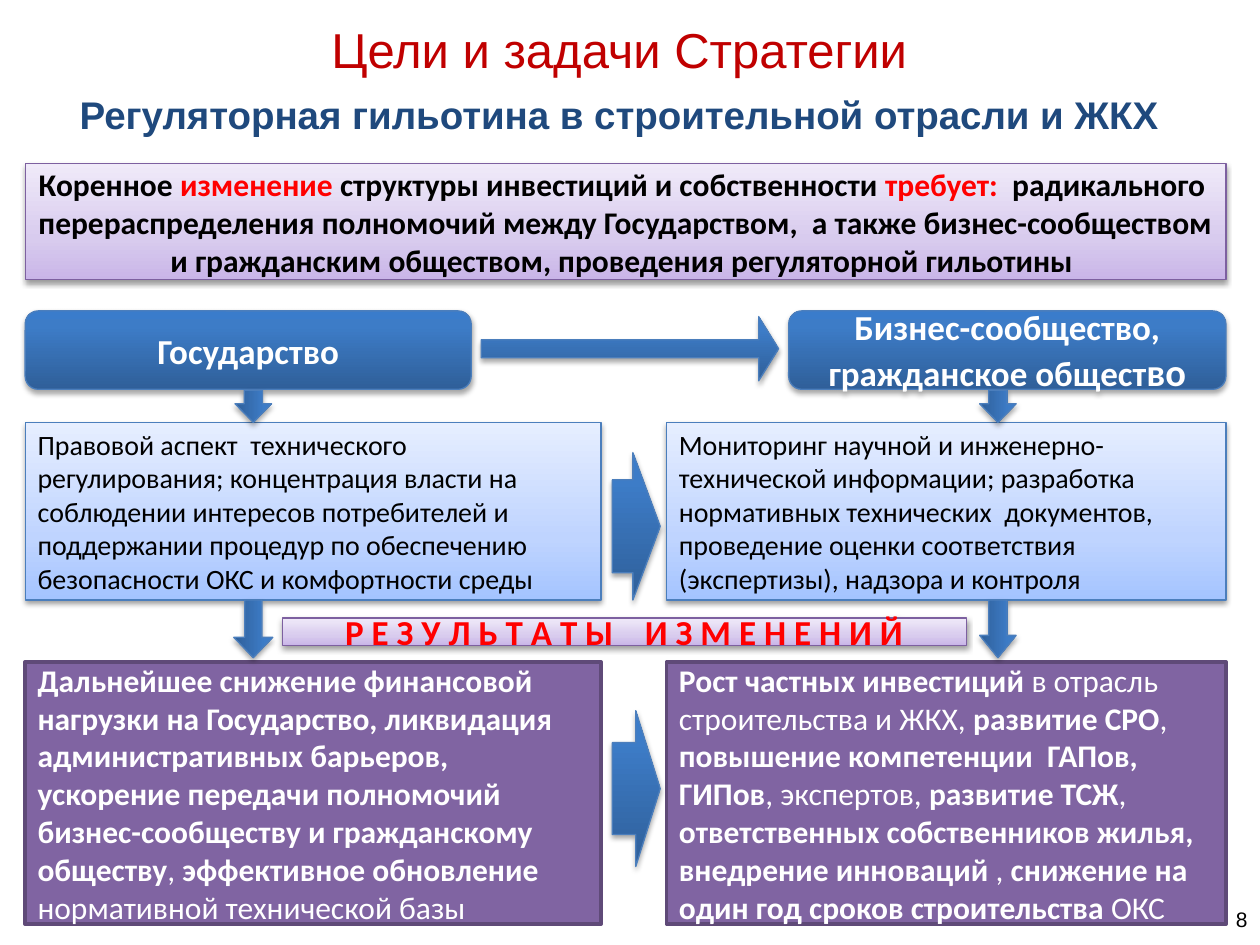
import collections

import lxml.etree
import pptx
import pptx.dml.color
import pptx.enum.shapes
import pptx.enum.text
import pptx.oxml.ns
import pptx.util

Box = collections.namedtuple("Box", "left top width height")
Style = collections.namedtuple("Style", "stops line shadow_alpha shadow_distance")

SHAPE = pptx.enum.shapes.MSO_SHAPE
ALIGN = pptx.enum.text.PP_ALIGN
WIDTH, HEIGHT = pptx.util.Inches(10), pptx.util.Inches(7.5)

BLUE = Style(((0, "2F5F99"), (80, "3D7CC7"), (100, "3A7CCB")), "4B7EBC", 35, 1.8)
PALE_BLUE = Style(((0, "A4C4FF"), (35, "BFD4FF"), (100, "E6EEFF")), "4B7EBC", 38, 1.6)
LILAC = Style(((0, "C9B5E8"), (35, "D8CBEE"), (100, "F0EAF9")), "7D60A0", 38, 1.6)
WHITE, BLACK, RED = "FFFFFF", "000000", "FF0000"


def color(value):
    return pptx.dml.color.RGBColor.from_string(value)


def place(box):
    return (int(WIDTH * box.left / 100), int(HEIGHT * box.top / 100),
            int(WIDTH * box.width / 100), int(HEIGHT * box.height / 100))


def add_node(parent, tag, **attributes):
    values = {key: str(value) for key, value in attributes.items()}
    return lxml.etree.SubElement(parent, pptx.oxml.ns.qn(tag), values)


def write(holder, text, size, ink, font="Calibri", bold=False,
          align=ALIGN.CENTER, accent=None):
    frame = holder.text_frame
    frame.word_wrap = True
    frame.auto_size = pptx.enum.text.MSO_AUTO_SIZE.NONE
    frame.vertical_anchor = pptx.enum.text.MSO_ANCHOR.MIDDLE
    paragraph = frame.paragraphs[0]
    paragraph.alignment = align
    base = {"size": size, "ink": ink, "bold": bold}
    for index, part in enumerate(text.split("|")):
        look = {**base, **(accent or {})} if index % 2 else base
        run = paragraph.add_run()
        run.text = part
        run.font.name = font
        run.font.size = pptx.util.Pt(look["size"])
        run.font.bold = look["bold"]
        run.font.color.rgb = color(look["ink"])


def add_panel(slide, kind, box, style):
    panel = slide.shapes.add_shape(kind, *place(box))
    panel.fill.gradient()
    panel.fill.gradient_angle = 90
    properties = panel.element.spPr
    stops = properties.find(".//" + pptx.oxml.ns.qn("a:gsLst"))
    stops.clear()
    for position, shade in style.stops:
        stop = add_node(stops, "a:gs", pos=position * 1000)
        add_node(stop, "a:srgbClr", val=shade)
    panel.line.color.rgb = color(style.line)
    panel.line.width = pptx.util.Pt(0.75)
    panel.shadow.inherit = False
    effects = properties.find(pptx.oxml.ns.qn("a:effectLst"))
    shadow = add_node(effects, "a:outerShdw", blurRad=pptx.util.Pt(3.1),
                      dist=pptx.util.Pt(style.shadow_distance), dir=5400000, rotWithShape=0)
    tint = add_node(shadow, "a:srgbClr", val=BLACK)
    add_node(tint, "a:alpha", val=style.shadow_alpha * 1000)
    return panel


def add_arrow(slide, box, shaft, head):
    arrow = add_panel(slide, SHAPE.RIGHT_ARROW, box, BLUE)
    arrow.adjustments[0], arrow.adjustments[1] = shaft, head
    return arrow


def add_down_arrow(slide, box, shaft, head):
    arrow = add_arrow(slide, box, shaft, head)
    middle, center = arrow.left + arrow.width // 2, arrow.top + arrow.height // 2
    arrow.width, arrow.height = arrow.height, arrow.width
    arrow.left, arrow.top = middle - arrow.width // 2, center - arrow.height // 2
    arrow.rotation = 90


def add_heading(slide, box):
    subject = slide.shapes.title
    subject.left, subject.top, subject.width, subject.height = place(
        Box(box.left + 0.9, box.top + 8.5, 94.5, 5.6))
    write(subject, "Регуляторная гильотина в строительной отрасли и ЖКХ",
          22, "1F497D", font="Arial", bold=True)
    strategy = slide.shapes.add_textbox(*place(box._replace(height=8.7)))
    write(strategy, "Цели и задачи Стратегии", 28, "C00000", font="Arial")


def add_banner(slide, box, text, size, ink, kind=SHAPE.RECTANGLE):
    banner = add_panel(slide, kind, box, LILAC)
    if kind == SHAPE.ROUNDED_RECTANGLE:
        banner.adjustments[0] = 0
    write(banner, text, size, ink, bold=True, accent={"ink": RED})


def add_party(slide, box, head_left, head_width, name, role, outcome):
    head = add_panel(slide, SHAPE.ROUNDED_RECTANGLE,
                     Box(head_left, box.top, head_width, 8.3), BLUE)
    write(head, name, 20, WHITE, bold=True, accent={"size": 22})

    duties = add_panel(slide, SHAPE.RECTANGLE,
                       box._replace(top=box.top + 11.8, height=18.8), PALE_BLUE)
    write(duties, role, 16, BLACK, align=ALIGN.LEFT)

    results = slide.shapes.add_shape(
        SHAPE.RECTANGLE, *place(box._replace(top=box.top + 37.15, height=box.height - 37.15)))
    results.fill.solid()
    results.fill.fore_color.rgb = color("8064A2")
    results.line.color.rgb = color("5F4A78")
    results.line.width = pptx.util.Pt(2)
    results.shadow.inherit = False
    write(results, outcome, 18, WHITE, bold=True, align=ALIGN.LEFT, accent={"bold": False})


def add_flow(slide, box):
    add_arrow(slide, Box(box.left + 36.2, box.top + 0.6, 23.6, 6.8), 0.28, 0.31)
    add_arrow(slide, Box(box.left + 46.6, box.top + 15, 3.8, 15.6), 0.63, 0.57)
    add_arrow(slide, Box(box.left + 46.6, box.top + 42.3, 3.8, 16.5), 0.59, 0.51)
    for axis, breadth, shaft, head in ((18.1, 3.1, 0.44, 0.52), (77.2, 2.9, 0.5, 0.61)):
        middle = box.left + axis
        add_down_arrow(slide, Box(middle - 1.45, box.top + 8.4, 2.9, 3.4), 0.5, 0.58)
        add_down_arrow(slide, Box(middle - breadth / 2, box.top + 30.6, breadth, 6.1), shaft, head)


def main():
    deck = pptx.Presentation()
    deck.slide_width, deck.slide_height = WIDTH, HEIGHT
    slide = deck.slides.add_slide(deck.slide_layouts[5])
    add_heading(slide, Box(1, 0.8, 96.3, 14.1))
    add_banner(slide, Box(2, 17.3, 95.3, 12.3),
               "Коренное |изменение| структуры инвестиций и собственности |требует:  |"
               "радикального  перераспределения полномочий между Государством,  а также "
               "бизнес-сообществом и гражданским обществом, проведения регуляторной гильотины ",
               18, BLACK)
    body = Box(2, 32.9, 95.3, 64.9)
    add_party(slide, body._replace(width=45.7), 2, 35.4, "Государство",
              "Правовой аспект  технического регулирования; концентрация власти на "
              "соблюдении интересов потребителей и поддержании процедур по обеспечению "
              "безопасности ОКС и комфортности среды",
              "Дальнейшее снижение финансовой нагрузки на Государство, ликвидация "
              "административных барьеров, ускорение передачи полномочий бизнес-сообществу "
              "и гражданскому обществу|, |эффективное обновление |нормативной технической базы")
    add_party(slide, body._replace(left=52.9, width=44.4), 62.6, 34.7,
              "Бизнес-сообщество, гражданское общест|во",
              "Мониторинг научной и инженерно-технической информации; разработка "
              "нормативных технических  документов, проведение оценки соответствия "
              "(экспертизы), надзора и контроля",
              "Рост частных инвестиций |в отрасль строительства и ЖКХ, |развитие СРО|, |"
              "повышение компетенции  ГАПов, ГИПов|, экспертов, |развитие ТСЖ|, |"
              "ответственных собственников жилья, внедрение инноваций |, |"
              "снижение на один год сроков строительства |ОКС")
    add_banner(slide, Box(22.4, 65.4, 54.3, 2.9),
               "Р Е З У Л Ь Т А Т Ы    И З М Е Н Е Н И Й", 20, RED, SHAPE.ROUNDED_RECTANGLE)
    add_flow(slide, body)
    page = slide.shapes.add_textbox(*place(Box(97, 94.5, 3, 5.6)))
    write(page, "8", 12, BLACK, font="Arial", align=ALIGN.RIGHT)
    deck.save("out.pptx")


if __name__ == "__main__":
    main()
